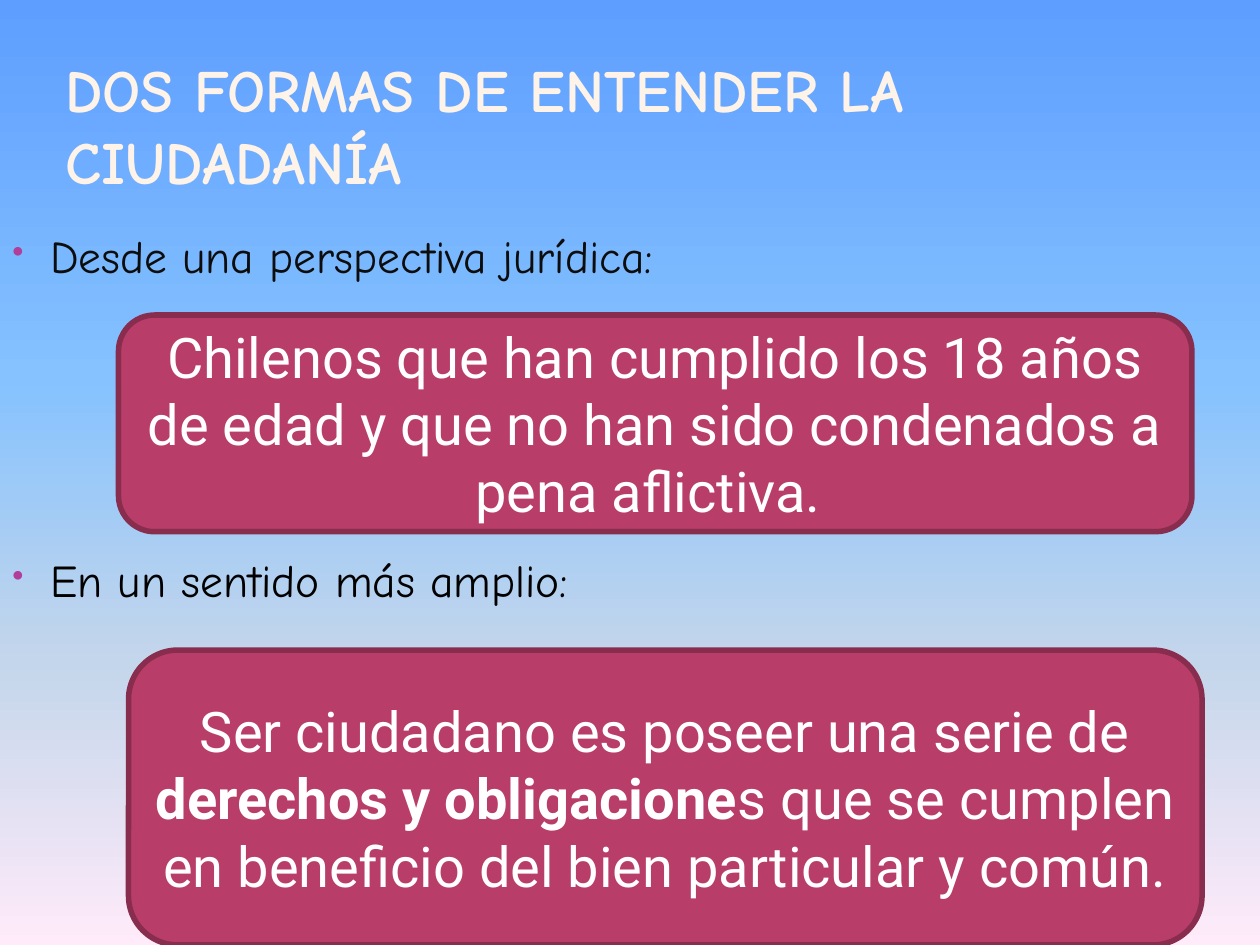
from pptx import Presentation
from pptx.dml.color import RGBColor
from pptx.enum.shapes import MSO_SHAPE
from pptx.enum.text import MSO_ANCHOR, MSO_AUTO_SIZE, PP_ALIGN
from pptx.oxml import parse_xml
from pptx.oxml.ns import nsdecls
from pptx.util import Inches, Pt

ROUNDED = MSO_SHAPE.ROUNDED_RECTANGLE
LEFT, CENTER = PP_ALIGN.LEFT, PP_ALIGN.CENTER
MIDDLE, BOTTOM = MSO_ANCHOR.MIDDLE, MSO_ANCHOR.BOTTOM
NO_AUTOFIT = MSO_AUTO_SIZE.NONE
TITLE_ONLY = 5

HAND, SANS = "Comic Neue", "Roboto"
SKY = [(0, "5E9EFF"), (40, "85C2FF"), (70, "C4D6EB"), (100, "FFEBFA")]


def rgb(value):
    return RGBColor.from_string(value)


def add_run(p, text, font, size, color, bold=False):
    r = p.add_run()
    r.text = text
    r.font.name = font
    r.font.size = Pt(size)
    r.font.bold = bold
    r.font.color.rgb = rgb(color)


def set_background(s, stops):
    fill = s.background.fill
    fill.gradient()
    fill.gradient_angle = 270  # top to bottom
    gs_list = s.background._cSld.find(".//{*}gsLst")
    for gs in list(gs_list):
        gs_list.remove(gs)
    for position, color in stops:
        gs_list.append(parse_xml(
            f'<a:gs {nsdecls("a")} pos="{position * 1000}">'
            f'<a:srgbClr val="{color}"/></a:gs>'))


def set_title(s, text):
    title = s.shapes.title
    title.left, title.top = Inches(0.47), Inches(0.31)
    title.width, title.height = Inches(9), Inches(1.25)
    tf = title.text_frame
    tf.word_wrap = True
    tf.auto_size = NO_AUTOFIT
    tf.vertical_anchor = BOTTOM
    tf.margin_left = tf.margin_right = Inches(0.05)
    tf.margin_top = tf.margin_bottom = 0
    p = tf.paragraphs[0]
    p.alignment = LEFT
    add_run(p, text, HAND, 34.2, "FEF3E8", bold=True)


def add_bullet(p, text, color):
    pPr = p._p.get_or_add_pPr()
    pPr.set("marL", str(Inches(0.3)))
    pPr.set("indent", str(Inches(-0.3)))
    for xml in ('<a:buClr {}><a:srgbClr val="B13F9A"/></a:buClr>',
                '<a:buSzPct {} val="73000"/>',
                '<a:buChar {} char="•"/>'):
        pPr.append(parse_xml(xml.format(nsdecls("a"))))
    add_run(p, text, HAND, 26, color)


def add_perspectives(s):
    sp = s.shapes.add_textbox(Inches(0), Inches(1.76), Inches(8.42), Inches(5.74))
    tf = sp.text_frame
    tf.word_wrap = True
    add_bullet(tf.paragraphs[0], "Desde una perspectiva jurídica:", "0D0D0D")
    p = tf.add_paragraph()
    p.space_before = Pt(154)  # leaves room for the first definition
    add_bullet(p, "En un sentido más amplio:", "000000")


def add_definition(s, left, top, height, runs):
    sp = s.shapes.add_shape(ROUNDED, Inches(left), Inches(top),
                            Inches(8.52), Inches(height))
    sp.shadow.inherit = False
    sp.fill.solid()
    sp.fill.fore_color.rgb = rgb("B83D68")
    sp.line.color.rgb = rgb("882D4D")
    sp.line.width = Pt(3.15)
    tf = sp.text_frame
    tf.word_wrap = True
    tf.vertical_anchor = MIDDLE
    p = tf.paragraphs[0]
    p.alignment = CENTER
    for text, bold in runs:
        add_run(p, text, SANS, 32, "FFFFFF", bold)


def main():
    prs = Presentation()
    prs.slide_width, prs.slide_height = Inches(10), Inches(7.5)
    s = prs.slides.add_slide(prs.slide_layouts[TITLE_ONLY])
    set_background(s, SKY)

    # Heading and the two points of view
    set_title(s, "DOS FORMAS DE ENTENDER LA CIUDADANÍA")
    add_perspectives(s)

    # One definition under each point of view
    add_definition(s, 0.94, 2.5, 1.72, [
        ("Chilenos que han cumplido los 18 años de edad y que no han sido "
         "condenados a pena aflictiva. ", False)])
    add_definition(s, 1.02, 5.16, 2.34, [
        ("Ser ciudadano es poseer una serie de ", False),
        ("derechos y obligacione", True),
        ("s que se cumplen en beneficio del bien particular y común.", False)])

    prs.save("out.pptx")


if __name__ == "__main__":
    main()
